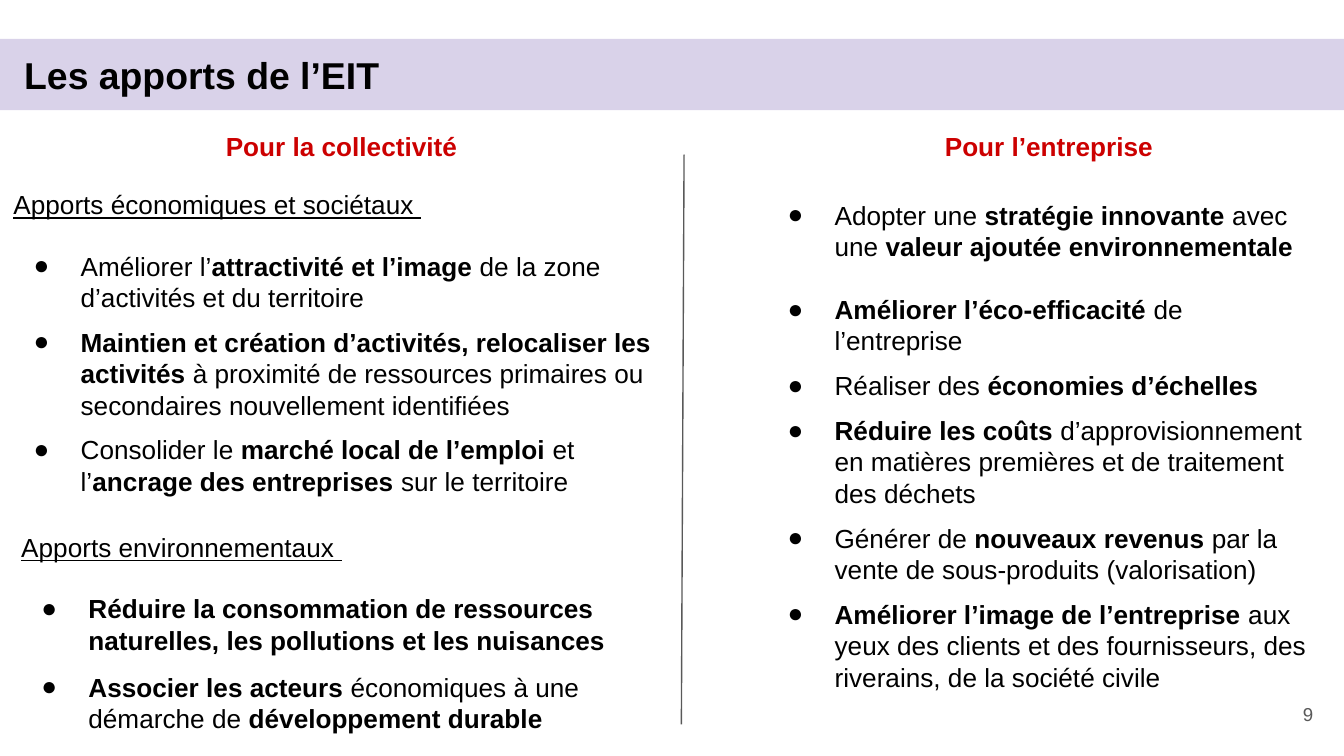
from dataclasses import dataclass

from lxml import etree
from pptx import Presentation, util as u
from pptx.dml.color import RGBColor
from pptx.enum import shapes, text
from pptx.oxml.ns import qn


@dataclass(frozen=True)
class Theme:
    font: str = "Arial"
    ink: str = "000000"
    band: str = "D9D2E9"
    red: str = "CC0000"
    gray: str = "595959"
    big: int = 20
    body: int = 14
    small: int = 10
    gap: float = 7.2


T = Theme()
WIDE = u.Inches(10)
HIGH = WIDE * 9 // 16
UNIT = WIDE / 100
LEFT, MID = text.PP_ALIGN.LEFT, text.MSO_ANCHOR.MIDDLE
TOP = text.MSO_ANCHOR.TOP

SOCIAL = [
    ("Améliorer l’*attractivité et l’image* de la zone d’activités et du territoire", 16),
    ("*Maintien et création d’activités, relocaliser les activités* à proximité "
     "de ressources primaires ou secondaires nouvellement identifiées", T.gap),
    ("Consolider le* marché local de l’emploi* et l’*ancrage des entreprises*"
     " sur le territoire", T.gap),
]
GREEN = [
    ("*Réduire la consommation de ressources naturelles, les pollutions et les nuisances*", 16),
    ("*Associer les acteurs* économiques à une démarche de *développement durable*", 8.3),
]
FIRM = [
    ("Adopter une *stratégie innovante* avec une *valeur ajoutée environnementale*", 0),
    ("*Améliorer l’éco-efficacité* de l’entreprise", 17),
    ("Réaliser des *économies d’échelles*", T.gap),
    ("*Réduire les coûts* d’approvisionnement en matières premières "
     "et de traitement des déchets", T.gap),
    ("Générer de *nouveaux revenus* par la vente de sous-produits (valorisation)", T.gap),
    ("*Améliorer l’image de l’entreprise* aux yeux des clients et des fournisseurs, "
     "des riverains, de la société civile", T.gap),
]


def place(shape, box, anchor=TOP):
    shape.left, shape.top, shape.width, shape.height = (round(n * UNIT) for n in box)
    frame = shape.text_frame
    frame.word_wrap = True
    frame.auto_size = text.MSO_AUTO_SIZE.NONE
    frame.vertical_anchor = anchor
    frame.margin_left = frame.margin_right = u.Inches(0.1)
    frame.margin_top = frame.margin_bottom = u.Inches(0.1)
    return frame


def inner(box, x, y, w, h):
    return box[0] + x, box[1] + y, w, h


def write(para, words, size=T.body, color=T.ink, bold=False, line=False,
          align=LEFT, gap=0, lead=1.0):
    para.alignment = align
    para.line_spacing = lead
    para.space_before, para.space_after = u.Pt(gap), u.Pt(0)
    for i, part in enumerate(words.split("*")):
        if not part:
            continue
        run = para.add_run()
        run.text = part
        font = run.font
        font.name, font.size = T.font, u.Pt(size)
        font.bold, font.underline = bold or i % 2 == 1, line
        font.color.rgb = RGBColor.from_string(color)


def mark(para, sign=None):
    props = para._p.get_or_add_pPr()
    props.set("marL", str(u.Inches(0.5) if sign else 0))
    props.set("indent", str(u.Inches(-0.35) if sign else 0))
    if not sign:
        etree.SubElement(props, qn("a:buNone"))
        return
    tint = etree.SubElement(props, qn("a:buClr"))
    etree.SubElement(tint, qn("a:srgbClr"), val=T.ink)
    etree.SubElement(props, qn("a:buSzPts"), val=str(T.body * 100))
    etree.SubElement(props, qn("a:buFont"), typeface=T.font)
    etree.SubElement(props, qn("a:buChar"), char=sign)


def title(shape, box):
    frame = place(shape, box, MID)
    frame.margin_left = u.Inches(0.18)
    shape.fill.solid()
    shape.fill.fore_color.rgb = RGBColor.from_string(T.band)
    write(frame.paragraphs[0], "Les apports de l’EIT", T.big, bold=True)


def head(shape, box, words):
    para = place(shape, box).paragraphs[0]
    write(para, words, color=T.red, bold=True)
    mark(para)


def points(shape, box, items, lead=None):
    frame = place(shape, box)
    para = frame.paragraphs[0]
    if lead:
        write(para, lead, line=True, lead=1.15)
        mark(para)
        para = frame.add_paragraph()
    for i, (words, gap) in enumerate(items):
        para = frame.add_paragraph() if i else para
        write(para, words, gap=gap)
        mark(para, "●")


def town(slide, box):
    hold = slide.placeholders
    head(hold[1], inner(box, 15.8, 0, 20.3, 3.9), "Pour la collectivité")
    points(hold[2], inner(box, 0, 4, box[2], 27), SOCIAL,
           "Apports économiques et sociétaux ")
    low = slide.shapes.add_textbox(0, 0, 0, 0)
    points(low, inner(box, 0.6, 29.5, 49.7, 12.8), GREEN, "Apports environnementaux ")


def firm(slide, box):
    hold = slide.placeholders
    head(hold[3], inner(box, 13.2, 0, 20.3, 3.9), "Pour l’entreprise")
    points(hold[4], inner(box, 0, 5.1, box[2], 42.4), FIRM)


def rule(slide, start, end):
    ends = [round(n * UNIT) for n in start + end]
    line = slide.shapes.add_connector(shapes.MSO_CONNECTOR.STRAIGHT, *ends)
    line.line.color.rgb = RGBColor.from_string(T.gray)
    line.line.width = u.Pt(0.75)
    etree.SubElement(line._element.spPr, qn("a:effectLst"))


def page(slide, box):
    frame = place(slide.shapes.add_textbox(0, 0, 0, 0), box, MID)
    write(frame.paragraphs[0], "9", T.small, T.gray, align=text.PP_ALIGN.RIGHT)


def main():
    deck = Presentation()
    deck.slide_width, deck.slide_height = WIDE, HIGH
    slide = deck.slides.add_slide(deck.slide_layouts[4])
    title(slide.shapes.title, (0, 2.9, 100, 5.3))
    town(slide, (0, 8.7, 50.9, 47.5))
    firm(slide, (56.1, 8.7, 42.6, 47.5))
    rule(slide, (50.9, 11.5), (50.7, 53.9))
    page(slide, (92.7, 51, 6, 4.3))
    deck.save("out.pptx")


if __name__ == "__main__":
    main()
